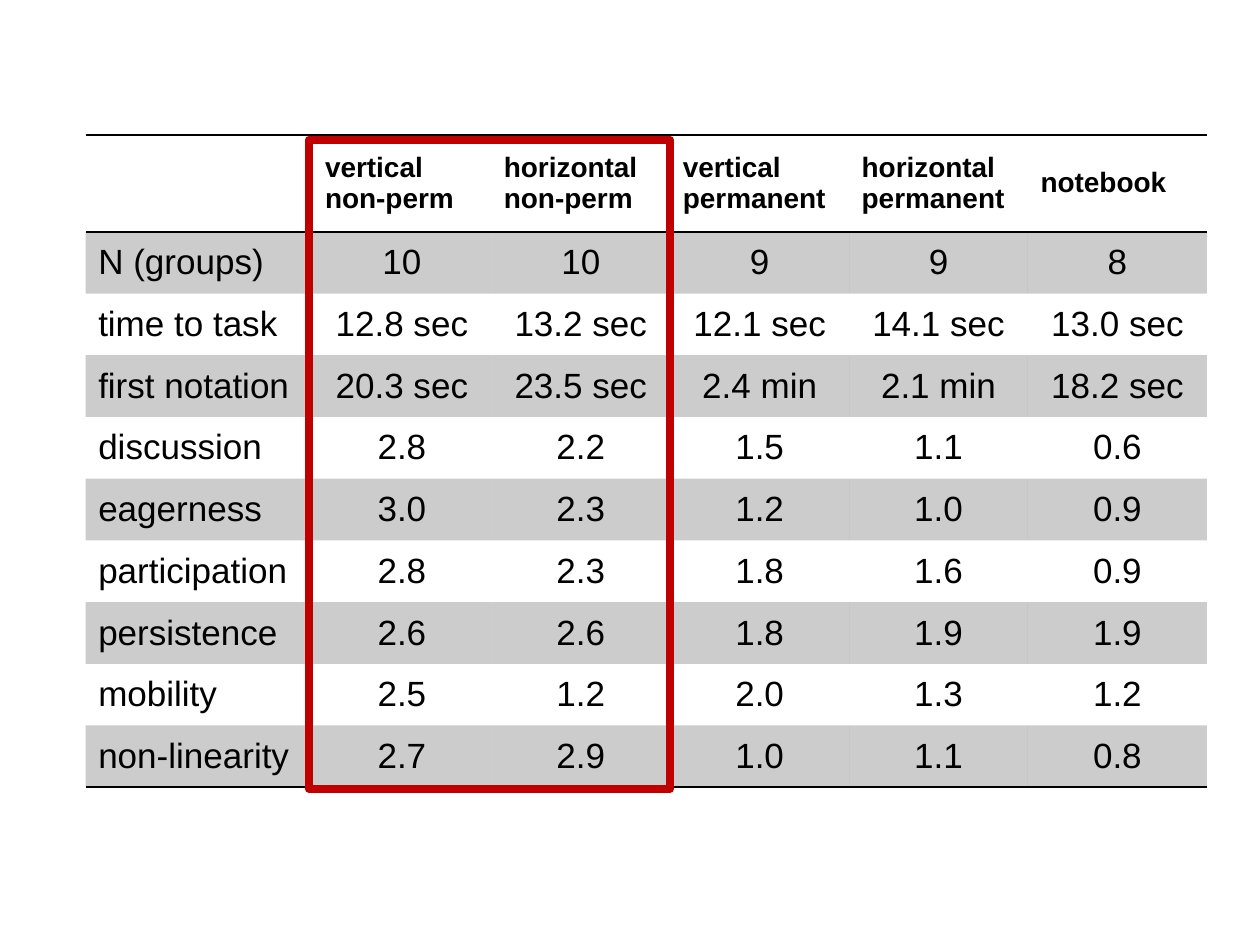
"""Build a slide with a table of work-surface results and a frame around the non-permanent columns."""
from lxml.etree import SubElement
from pptx import Presentation
from pptx.dml.color import RGBColor
from pptx.enum.shapes import MSO_SHAPE
from pptx.enum.text import MSO_ANCHOR, PP_ALIGN
from pptx.oxml import parse_xml
from pptx.oxml.ns import nsdecls, qn
from pptx.util import Inches, Pt

HEADER = ["", "vertical\nnon-perm", "horizontal non-perm", "vertical permanent",
          "horizontal permanent", "notebook"]
RESULTS = [
    ("N (groups)", "10", "10", "9", "9", "8"),
    ("time to task", "12.8 sec", "13.2 sec", "12.1 sec", "14.1 sec", "13.0 sec"),
    ("first notation", "20.3 sec", "23.5 sec", "2.4 min", "2.1 min", "18.2 sec"),
    ("discussion", "2.8", "2.2", "1.5", "1.1", "0.6"),
    ("eagerness", "3.0", "2.3", "1.2", "1.0", "0.9"),
    ("participation", "2.8", "2.3", "1.8", "1.6", "0.9"),
    ("persistence", "2.6", "2.6", "1.8", "1.9", "1.9"),
    ("mobility", "2.5", "1.2", "2.0", "1.3", "1.2"),
    ("non-linearity", "2.7", "2.9", "1.0", "1.1", "0.8"),
]
THEME = {"font": "Arial", "ink": "000000", "frame": "C00000", "band_opacity": 20,
         "header_size": 16, "body_size": 20, "rule_width": 1, "frame_width": 4.5}
TABLE_LEFT, TABLE_TOP = 0.68, 1.07
COLUMN_WIDTHS = [1.8] + [1.42] * 5
ROW_HEIGHTS = [0.77] + [0.49] * len(RESULTS)
FRAME_BOX = (2.45, 1.11, 2.87, 5.15)
NO_GRID_STYLE = "{2D5ABB26-0587-4C30-8999-92F81FD0307C}"


def write_text(text_frame, text, *, size, bold=False, align=PP_ALIGN.LEFT):
    text_frame.text = text
    for paragraph in text_frame.paragraphs:
        paragraph.alignment = align
        font = paragraph.font
        for run in paragraph.runs:
            font = run.font
            font.name = THEME["font"]
            font.size = Pt(size)
            font.bold = bold
            font.color.rgb = RGBColor.from_string(THEME["ink"])


def fill_band(cell):
    cell.fill.solid()
    cell.fill.fore_color.rgb = RGBColor.from_string(THEME["ink"])
    color = cell._tc.tcPr.find(".//" + qn("a:srgbClr"))
    SubElement(color, qn("a:alpha"), val=str(THEME["band_opacity"] * 1000))


def add_rules(cell, sides):
    for position, side in enumerate(sides):
        rule = parse_xml(
            f'<a:ln{side} {nsdecls("a")} w="{Pt(THEME["rule_width"])}"><a:solidFill>'
            f'<a:srgbClr val="{THEME["ink"]}"/></a:solidFill></a:ln{side}>')
        cell._tc.get_or_add_tcPr().insert(position, rule)


def add_results_table(slide):
    rows = [HEADER, *RESULTS]
    frame = slide.shapes.add_table(
        len(rows), len(HEADER), Inches(TABLE_LEFT), Inches(TABLE_TOP),
        Inches(sum(COLUMN_WIDTHS)), Inches(sum(ROW_HEIGHTS)))
    table = frame.table
    table.horz_banding = False
    table._tbl.tblPr.find(qn("a:tableStyleId")).text = NO_GRID_STYLE
    for column, width in zip(table.columns, COLUMN_WIDTHS):
        column.width = Inches(width)
    for row, height in zip(table.rows, ROW_HEIGHTS):
        row.height = Inches(height)
    for row_index, values in enumerate(rows):
        is_header = row_index == 0
        for column_index, value in enumerate(values):
            cell = table.cell(row_index, column_index)
            cell.vertical_anchor = MSO_ANCHOR.MIDDLE
            centered = not is_header and column_index > 0
            write_text(cell.text_frame, value, bold=is_header,
                       size=THEME["header_size" if is_header else "body_size"],
                       align=PP_ALIGN.CENTER if centered else PP_ALIGN.LEFT)
            if row_index % 2:
                fill_band(cell)
            else:
                cell.fill.background()
            if is_header:
                add_rules(cell, "TB")
            elif row_index == len(RESULTS):
                add_rules(cell, "B")


def add_highlight_frame(slide):
    shape = slide.shapes.add_shape(MSO_SHAPE.RECTANGLE, *map(Inches, FRAME_BOX))
    shape.shadow.inherit = False
    shape.fill.background()
    shape.line.color.rgb = RGBColor.from_string(THEME["frame"])
    shape.line.width = Pt(THEME["frame_width"])


def main():
    presentation = Presentation()
    presentation.slide_width, presentation.slide_height = Inches(10), Inches(7.5)
    slide = presentation.slides.add_slide(presentation.slide_layouts[6])
    add_results_table(slide)
    add_highlight_frame(slide)
    presentation.save("out.pptx")


if __name__ == "__main__":
    main()
